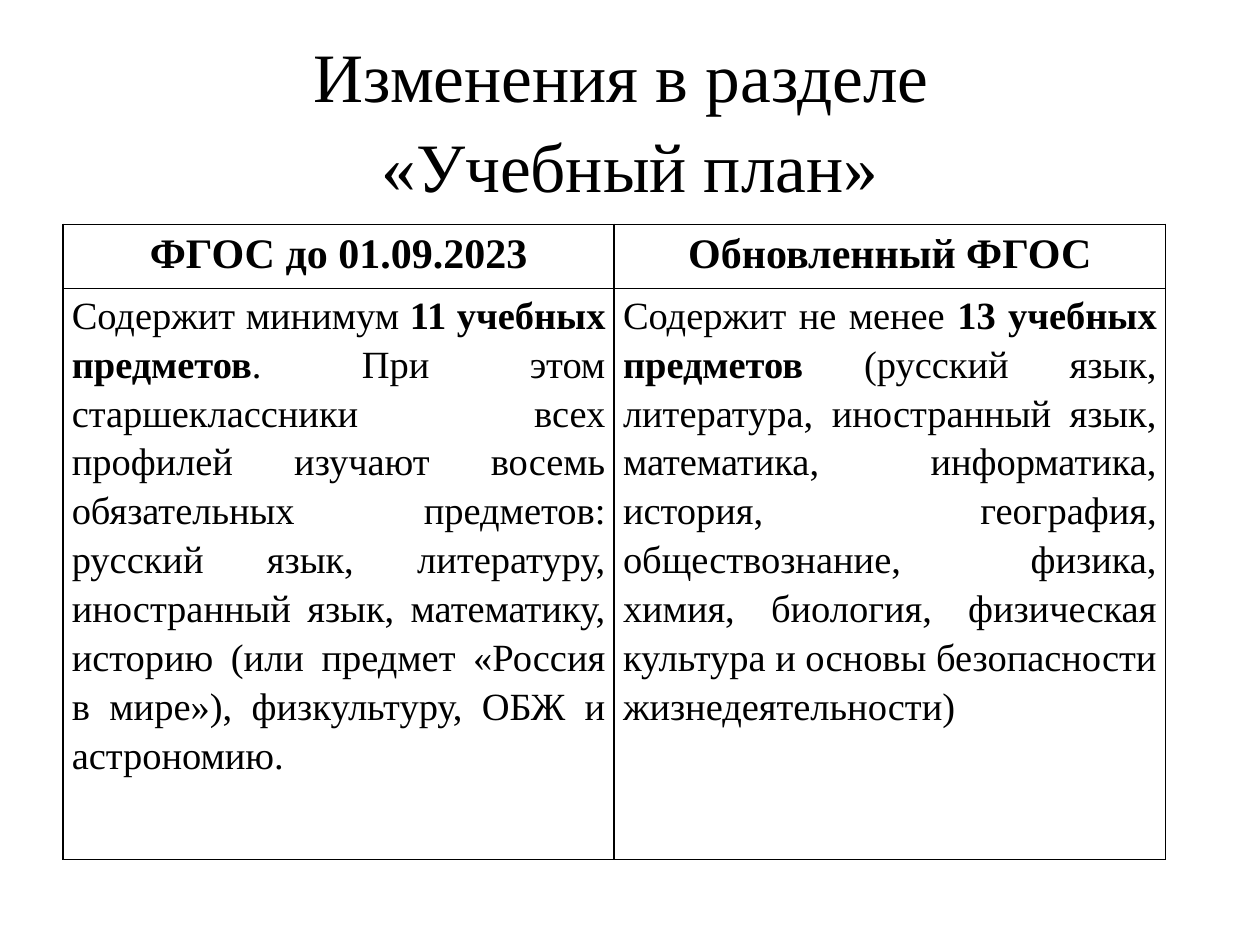
from lxml import etree
from pptx import Presentation
from pptx.dml.color import RGBColor
from pptx.enum.text import MSO_ANCHOR, MSO_AUTO_SIZE, PP_ALIGN
from pptx.oxml.ns import qn
from pptx.util import Inches, Pt

BLACK = RGBColor(0, 0, 0)
WHITE = RGBColor(255, 255, 255)
FONT = "Times New Roman"
CENTER, JUSTIFY = PP_ALIGN.CENTER, PP_ALIGN.JUSTIFY
MIDDLE, NO_FIT = MSO_ANCHOR.MIDDLE, MSO_AUTO_SIZE.NONE


def write(tf, runs, size, align, spacing):
    """Fill the first paragraph with (text, bold) runs."""
    p = tf.paragraphs[0]
    p.alignment = align
    p.line_spacing = spacing
    for i, (text, bold) in enumerate(runs):
        # A line break separates the lines of one run
        for j, line in enumerate(text.split("\n")):
            if j:
                p.add_line_break()
            r = p.add_run()
            r.text = line
            r.font.name = FONT
            r.font.size = Pt(size)
            r.font.bold = bold
            r.font.color.rgb = BLACK


def add_borders(cell):
    tcPr = cell._tc.get_or_add_tcPr()
    for i, side in enumerate(("lnL", "lnR", "lnT", "lnB")):
        ln = etree.Element(qn("a:" + side), w=str(Pt(1)))
        fill = etree.SubElement(ln, qn("a:solidFill"))
        etree.SubElement(fill, qn("a:srgbClr"), val=str(BLACK))
        tcPr.insert(i, ln)


prs = Presentation()
prs.slide_width, prs.slide_height = Inches(10), Inches(7.5)
s = prs.slides.add_slide(prs.slide_layouts[5])

# Title
title = s.shapes.title
title.left, title.top = Inches(0.5), Inches(0.3)
title.width, title.height = Inches(9), Inches(1.25)
tf = title.text_frame
tf.auto_size = NO_FIT
tf.vertical_anchor = MIDDLE
write(tf, [("Изменения в разделе \n«Учебный план»", False)], 39.6, CENTER, 1.08)

# Comparison table
headers = ["ФГОС до 01.09.2023", "Обновленный ФГОС"]
details = [
    [("Содержит минимум ", False),
     ("11 учебных предметов", True),
     (". При этом старшеклассники всех профилей изучают восемь обязательных "
      "предметов: русский язык, литературу, иностранный язык, математику, "
      "историю (или предмет «Россия в мире»), физкультуру, ОБЖ и "
      "астрономию.", False)],
    [("Содержит не менее ", False),
     ("13 учебных предметов", True),
     (" (русский язык, литература, иностранный язык, математика, "
      "информатика, история, география, обществознание, физика, химия, "
      "биология, физическая культура и основы безопасности "
      "жизнедеятельности)", False)],
]
rows = [
    # height, side margin, size, alignment, cells
    (0.51, 0.05, 24, CENTER, [[(h, True)] for h in headers]),
    (4.53, 0.07, 22, JUSTIFY, details),
]
table = s.shapes.add_table(2, 2, Inches(0.5), Inches(1.78),
                           Inches(8.75), Inches(5.04)).table
for col in table.columns:
    col.width = Inches(8.75 / 2)
for i, (height, margin, size, align, cells) in enumerate(rows):
    table.rows[i].height = Inches(height)
    for j, runs in enumerate(cells):
        cell = table.cell(i, j)
        cell.margin_left = cell.margin_right = Inches(margin)
        cell.margin_top = cell.margin_bottom = 0
        cell.fill.solid()
        cell.fill.fore_color.rgb = WHITE
        add_borders(cell)
        write(cell.text_frame, runs, size, align, 1.15)

prs.save("out.pptx")
